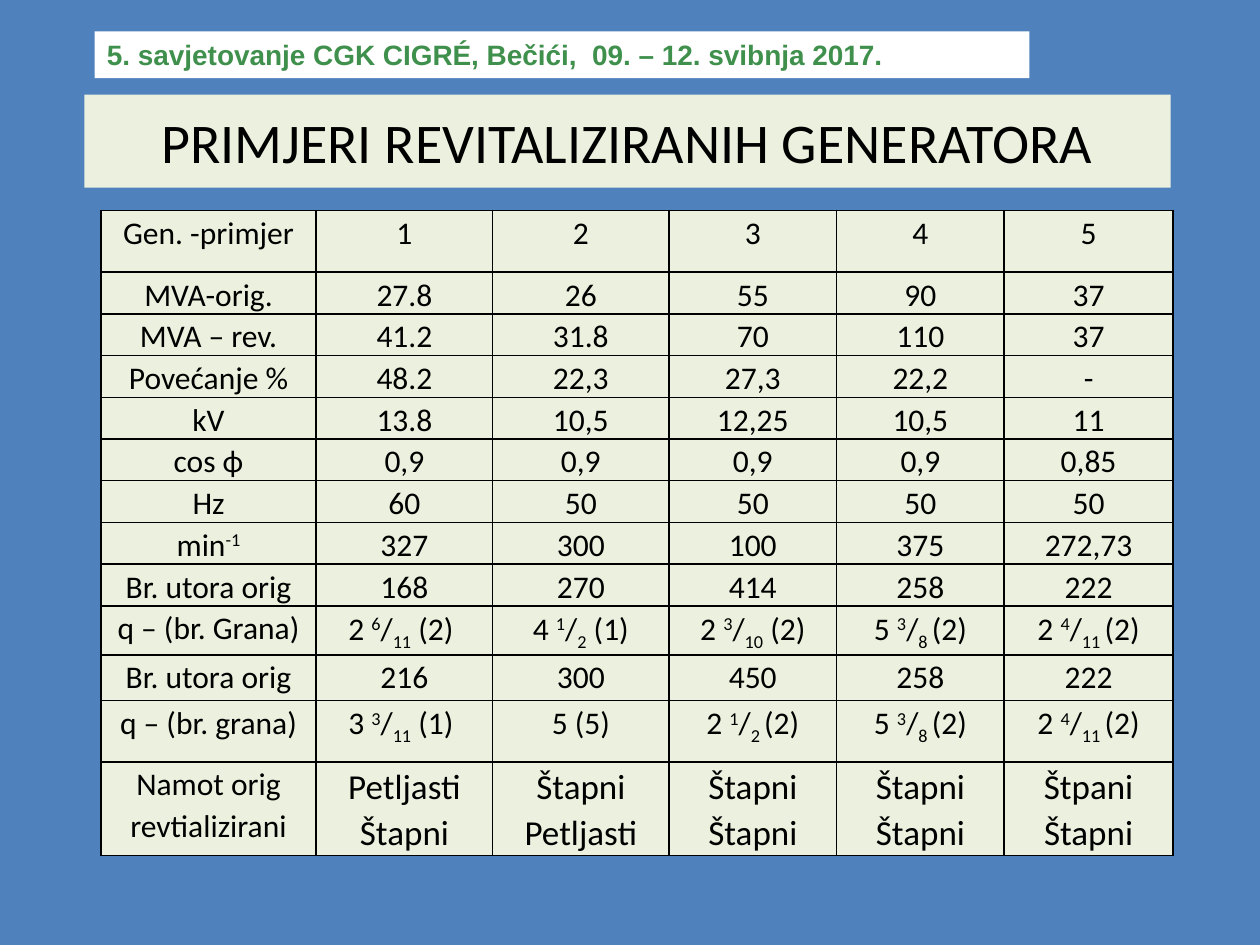
from dataclasses import dataclass
from typing import Any

from lxml.etree import SubElement
from pptx import Presentation
from pptx.dml.color import RGBColor
from pptx.enum.shapes import MSO_SHAPE
from pptx.enum.text import MSO_ANCHOR, MSO_AUTO_SIZE, PP_ALIGN
from pptx.oxml.ns import qn
from pptx.util import Inches, Pt

COLORS = {"blue": "4F81BD", "white": "FFFFFF", "green": "40904D",
          "cream": "EBF1DE", "black": "000000"}
SHIFTS = {"^": "30000", "_": "-25000"}
COLS = [1.71, 1.4, 1.4, 1.33, 1.33, 1.34]
BODY = {"line_spacing": 1.07, "space_after": Pt(8), "alignment": PP_ALIGN.CENTER}
LAST = BODY | {"space_after": Pt(0)}


@dataclass
class Row:
    height: float
    cells: list[str]
    head: int = 18
    size: int = 18
    inset: float = 0.05
    style: Any = None


ROWS = [
    Row(0.49, ["Gen. -primjer", "1", "2", "3", "4", "5"]),
    Row(0.33, ["MVA-orig.", "27.8", "26", "55", "90", "37"]),
    Row(0.33, ["MVA – rev.", "41.2", "31.8", "70", "110", "37"]),
    Row(0.33, ["Povećanje %", "48.2", "22,3", "27,3", "22,2", "-"]),
    Row(0.33, ["kV", "13.8", "10,5", "12,25", "10,5", "11"]),
    Row(0.33, ["cos ϕ", "0,9", "0,9", "0,9", "0,9", "0,85"]),
    Row(0.33, ["Hz", "60", "50", "50", "50", "50"]),
    Row(0.33, ["min|^-1", "327", "300", "100", "375", "272,73"]),
    Row(0.33, ["Br. utora orig", "168", "270", "414", "258", "222"]),
    Row(0.39, ["q – (br. Grana)", "2 |^6|/|_11| (2) ", "4 |^1|/|_2| (1)",
               "2 |^3|/|_10| (2)", "5 |^3|/|_8 |(2)", "2 |^4|/|_11 |(2)"]),
    Row(0.36, ["Br. utora orig", "216", "300", "450", "258", "222"]),
    Row(0.49, ["q – (br. grana)", "3 |^3|/|_11| (1) ", "5 (5)",
               "2 |^1|/|_2 |(2)", "5 |^3|/|_8 |(2)", "2 |^4|/|_11 |(2)"]),
    Row(0.74, ["Namot orig\nrevtializirani", "Petljasti\nŠtapni", "Štapni\nPetljasti",
               "Štapni\nŠtapni", "Štapni\nŠtapni", "Štpani\nŠtapni"],
        size=20, inset=0.07, style=LAST),
]


def rgb(name: str) -> RGBColor:
    return RGBColor.from_string(COLORS[name])


def apply(target: Any, values: dict[str, Any]) -> None:
    for name, value in values.items():
        setattr(target, name, value)


def paint(target: Any, color: str) -> None:
    target.fill.solid()
    target.fill.fore_color.rgb = rgb(color)


def write(par: Any, text: str, color: str, **font: Any) -> None:
    for part in text.split("|"):
        run = par.add_run()
        run.text = part.lstrip("^_")
        apply(run.font, font)
        run.font.color.rgb = rgb(color)
        if part[0] in SHIFTS:
            run.font._element.set("baseline", SHIFTS[part[0]])


def border(cell: Any) -> None:
    props = cell._tc.get_or_add_tcPr()
    for side in ("lnL", "lnR", "lnT", "lnB"):
        line = SubElement(props, qn(f"a:{side}"), w=str(Pt(1)))
        fill = SubElement(line, qn("a:solidFill"))
        SubElement(fill, qn("a:srgbClr"), val=COLORS["black"])


def fill_cell(cell: Any, text: str, size: int, row: Row) -> None:
    border(cell)
    paint(cell, "cream")
    apply(cell, {"margin_left": Inches(row.inset), "margin_right": Inches(row.inset),
                 "margin_top": Inches(0.01), "margin_bottom": 0})
    frame = cell.text_frame
    for i, line in enumerate(text.split("\n")):
        par = frame.add_paragraph() if i else frame.paragraphs[0]
        apply(par, row.style or BODY)
        write(par, line, "black", name="Calibri", size=Pt(size))


def add_banner(slide: Any) -> None:
    box = slide.shapes.add_shape(MSO_SHAPE.RECTANGLE, Inches(0.75), Inches(0.25),
                                 Inches(7.42), Inches(0.37))
    box.shadow.inherit = False
    paint(box, "white")
    box.line.fill.background()
    apply(box.text_frame, {"word_wrap": True, "vertical_anchor": MSO_ANCHOR.TOP,
                           "auto_size": MSO_AUTO_SIZE.SHAPE_TO_FIT_TEXT})
    par = box.text_frame.paragraphs[0]
    par.alignment = PP_ALIGN.LEFT
    write(par, "5. savjetovanje CGK CIGRÉ, Bečići,  09. – 12. svibnja 2017.",
          "green", name="Arial", size=Pt(16), bold=True)


def add_title(slide: Any) -> None:
    title = slide.shapes.title
    apply(title, {"left": Inches(0.67), "top": Inches(0.75),
                  "width": Inches(8.62), "height": Inches(0.74)})
    paint(title, "cream")
    apply(title.text_frame, {"vertical_anchor": MSO_ANCHOR.MIDDLE, "word_wrap": True,
                             "auto_size": MSO_AUTO_SIZE.NONE})
    par = title.text_frame.paragraphs[0]
    par.alignment = PP_ALIGN.CENTER
    write(par, "PRIMJERI REVITALIZIRANIH GENERATORA", "black",
          name="Calibri", size=Pt(32))


def add_grid(slide: Any) -> None:
    height = sum(row.height for row in ROWS)
    table = slide.shapes.add_table(len(ROWS), len(COLS), Inches(0.8), Inches(1.67),
                                   Inches(sum(COLS)), Inches(height)).table
    apply(table, {"first_row": False, "horz_banding": False})
    for col, width in zip(table.columns, COLS):
        col.width = Inches(width)
    for r, row in enumerate(ROWS):
        table.rows[r].height = Inches(row.height)
        for c, text in enumerate(row.cells):
            fill_cell(table.cell(r, c), text, row.size if c else row.head, row)


def main() -> None:
    deck = Presentation()
    apply(deck, {"slide_width": Inches(10), "slide_height": Inches(7.5)})
    slide = deck.slides.add_slide(deck.slide_layouts[5])
    paint(slide.background, "blue")
    add_banner(slide)
    add_title(slide)
    add_grid(slide)
    deck.save("out.pptx")


if __name__ == "__main__":
    main()
